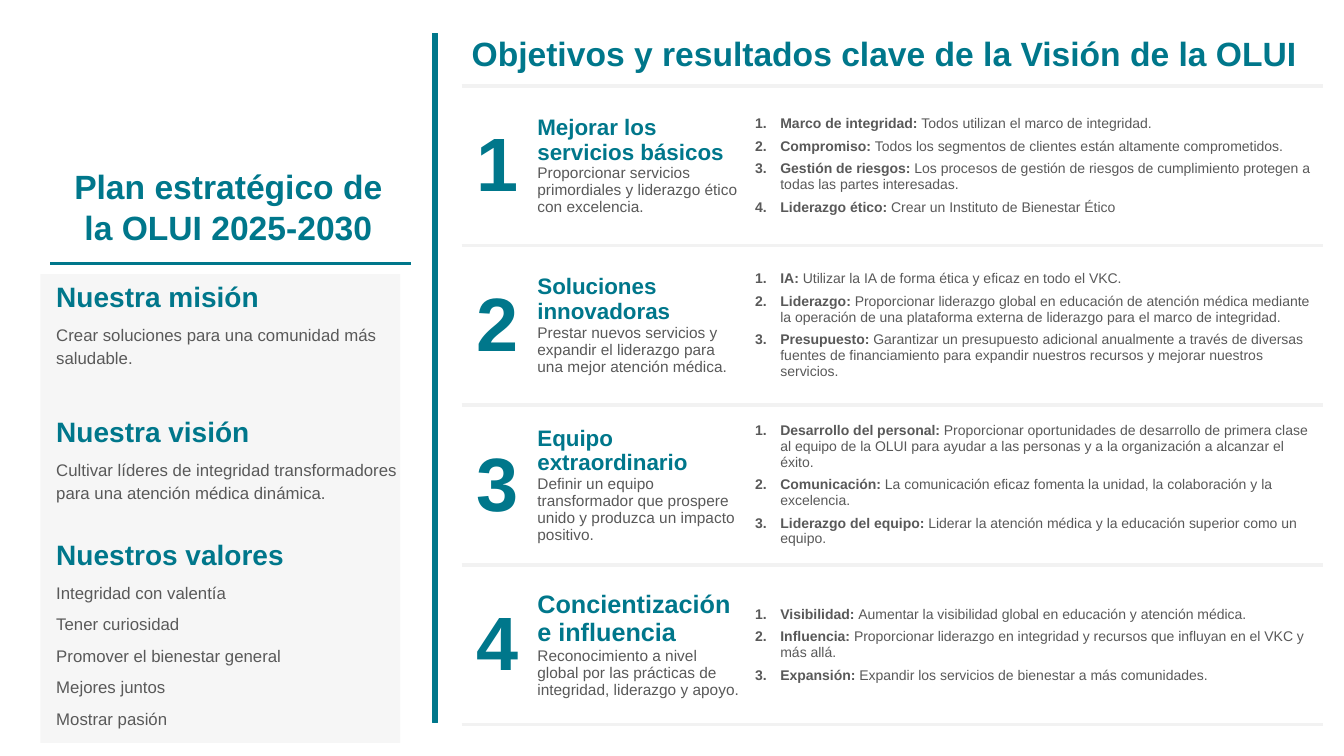
from lxml import etree
from pptx import Presentation
from pptx.dml.color import RGBColor
from pptx.enum.shapes import MSO_CONNECTOR, MSO_SHAPE
from pptx.enum.text import MSO_ANCHOR, PP_ALIGN
from pptx.oxml.ns import qn
from pptx.util import Inches, Pt

RECTANGLE = MSO_SHAPE.RECTANGLE
STRAIGHT = MSO_CONNECTOR.STRAIGHT
MIDDLE = MSO_ANCHOR.MIDDLE
LEFT, CENTER = PP_ALIGN.LEFT, PP_ALIGN.CENTER

FONT = "Arial"
COLORS = {"teal": "00778B", "gray": "595959", "pale": "F2F2F2"}

PLAN_TITLE = "Plan estratégico de la OLUI 2025-2030"
GOALS_TITLE = "Objetivos y resultados clave de la Visión de la OLUI"

# Heading, body lines, space after each body line in points
STATEMENTS = [
    ("Nuestra misión", ["Crear soluciones para una comunidad más saludable."], 30),
    ("Nuestra visión", ["Cultivar líderes de integridad transformadores para una "
                        "atención médica dinámica."], 22),
    ("Nuestros valores", ["Integridad con valentía", "Tener curiosidad",
                          "Promover el bienestar general", "Mejores juntos",
                          "Mostrar pasión"], 6),
]

# Goal, heading size, description, key results
GOALS = [
    ("Mejorar los servicios básicos", 16,
     "Proporcionar servicios primordiales y liderazgo ético con excelencia.",
     [("Marco de integridad:", "Todos utilizan el marco de integridad."),
      ("Compromiso:", "Todos los segmentos de clientes están altamente comprometidos."),
      ("Gestión de riesgos:", "Los procesos de gestión de riesgos de cumplimiento "
       "protegen a todas las partes interesadas."),
      ("Liderazgo ético:", "Crear un Instituto de Bienestar Ético")]),
    ("Soluciones innovadoras", 16,
     "Prestar nuevos servicios y expandir el liderazgo para una mejor atención médica.",
     [("IA:", "Utilizar la IA de forma ética y eficaz en todo el VKC."),
      ("Liderazgo:", "Proporcionar liderazgo global en educación de atención médica "
       "mediante la operación de una plataforma externa de liderazgo para el marco "
       "de integridad."),
      ("Presupuesto:", "Garantizar un presupuesto adicional anualmente a través de "
       "diversas fuentes de financiamiento para expandir nuestros recursos y mejorar "
       "nuestros servicios.")]),
    ("Equipo extraordinario", 16,
     "Definir un equipo transformador que prospere unido y produzca un impacto positivo.",
     [("Desarrollo del personal:", "Proporcionar oportunidades de desarrollo de primera "
       "clase al equipo de la OLUI para ayudar a las personas y a la organización a "
       "alcanzar el éxito."),
      ("Comunicación:", "La comunicación eficaz fomenta la unidad, la colaboración y la "
       "excelencia."),
      ("Liderazgo del equipo:", "Liderar la atención médica y la educación superior "
       "como un equipo.")]),
    ("Concientización e influencia", 18,
     "Reconocimiento a nivel global por las prácticas de integridad, liderazgo y apoyo.",
     [("Visibilidad:", "Aumentar la visibilidad global en educación y atención médica."),
      ("Influencia:", "Proporcionar liderazgo en integridad y recursos que influyan en "
       "el VKC y más allá."),
      ("Expansión:", "Expandir los servicios de bienestar a más comunidades.")]),
]

# Inches
SLIDE_WIDTH, SLIDE_HEIGHT = 13.33, 7.5
GOALS_LEFT, GOALS_TOP, GOALS_HEIGHT = 4.58, 0.85, 6.34
COLUMN_WIDTHS = [0.7, 2.11, 5.73]
GOALS_WIDTH = sum(COLUMN_WIDTHS)
RULE_LEFT, RULE_RIGHT, RULE_Y = 0.5, 4.08, 2.61
NUMBER_INDENT = 0.25


def color(name):
    return RGBColor.from_string(COLORS[name])


def inches(*lengths):
    return [Inches(length) for length in lengths]


def add_span(para, text, size, color_name, bold=False):
    span = para.add_run()
    span.text = text
    span.font.name = FONT
    span.font.size = Pt(size)
    span.font.bold = bold
    span.font.color.rgb = color(color_name)


def next_para(frame):
    """Return the frame's first paragraph while it is unused, else a new one."""
    first = frame.paragraphs[0]
    return frame.add_paragraph() if first.runs else first


def add_para(frame, spans, align=LEFT, before=0, after=0, spacing=None):
    para = next_para(frame)
    para.alignment = align
    para.space_before, para.space_after = Pt(before), Pt(after)
    if spacing:
        para.line_spacing = spacing
    for span in spans:
        add_span(para, *span)
    return para


def number_para(para):
    properties = para._p.get_or_add_pPr()
    properties.set("marL", str(Inches(NUMBER_INDENT)))
    properties.set("indent", str(-Inches(NUMBER_INDENT)))
    etree.SubElement(properties, qn("a:buAutoNum"), type="arabicPeriod")


def add_box(page, *place):
    frame = page.shapes.add_textbox(*inches(*place)).text_frame
    frame.word_wrap = True
    return frame


def add_block(page, place, color_name):
    block = page.shapes.add_shape(RECTANGLE, *inches(*place))
    block.shadow.inherit = False
    block.fill.solid()
    block.fill.fore_color.rgb = color(color_name)
    block.line.fill.background()
    return block


def border_rows(cell):
    """Draw pale lines above and below the cell and none at its sides."""
    properties = cell._tc.get_or_add_tcPr()
    for position, edge in enumerate(("a:lnL", "a:lnR", "a:lnT", "a:lnB")):
        line = etree.Element(qn(edge))
        if edge in ("a:lnT", "a:lnB"):
            line.set("w", str(Pt(3)))
            fill = etree.SubElement(line, qn("a:solidFill"))
            etree.SubElement(fill, qn("a:srgbClr"), val=COLORS["pale"])
        else:
            etree.SubElement(line, qn("a:noFill"))
        properties.insert(position, line)


def add_statements(page):
    panel = add_block(page, (0.4, 2.72, 3.57, 4.65), "pale")
    tint = panel.fill._xPr.find(".//" + qn("a:srgbClr"))
    etree.SubElement(tint, qn("a:alpha"), val="68000")

    frame = add_box(page, 0.46, 2.68, 3.7, 4.62)
    for heading, lines, gap in STATEMENTS:
        add_para(frame, [(heading, 20, "teal", True)], after=6, spacing=1.14)
        for line in lines:
            add_para(frame, [(line, 12, "gray")], after=gap, spacing=1.14)

    title = add_box(page, 0.48, 1.6, 3.57, 0.91)
    add_para(title, [(PLAN_TITLE, 24, "teal", True)], CENTER)
    rule = page.shapes.add_connector(
        STRAIGHT, *inches(RULE_LEFT, RULE_Y, RULE_RIGHT, RULE_Y))
    rule.line.color.rgb = color("teal")
    rule.line.width = Pt(2.25)
    etree.SubElement(rule._element.spPr, qn("a:effectLst"))


def add_goals(page):
    table = page.shapes.add_table(
        len(GOALS), len(COLUMN_WIDTHS),
        *inches(GOALS_LEFT, GOALS_TOP, GOALS_WIDTH, GOALS_HEIGHT)).table
    table.first_row = table.horz_banding = False
    for column, width in zip(table.columns, COLUMN_WIDTHS):
        column.width = Inches(width)

    for index, (goal, size, description, results) in enumerate(GOALS):
        table.rows[index].height = Inches(GOALS_HEIGHT / len(GOALS))
        cells = table.rows[index].cells
        for cell in cells:
            cell.vertical_anchor = MIDDLE
            cell.fill.background()
            border_rows(cell)
        number_cell, goal_cell, results_cell = cells
        add_para(number_cell.text_frame,
                 [(str(index + 1), 54, "teal", True)], CENTER)

        goal_cell.margin_left = goal_cell.margin_right = Inches(0.05)
        para = add_para(goal_cell.text_frame, [(goal, size, "teal", True)],
                        before=3, after=3)
        para.add_line_break()
        add_span(para, description, 11, "gray")

        for label, result in results:
            number_para(add_para(
                results_cell.text_frame,
                [(label + " ", 10, "gray", True), (result, 10, "gray")],
                before=3, after=2))


def main():
    deck = Presentation()
    deck.slide_width, deck.slide_height = inches(SLIDE_WIDTH, SLIDE_HEIGHT)
    page = deck.slides.add_slide(deck.slide_layouts[6])
    add_statements(page)
    add_goals(page)
    title = add_box(page, GOALS_LEFT, 0.28, GOALS_WIDTH, 0.5)
    add_para(title, [(GOALS_TITLE, 24, "teal", True)], after=12)
    divider = add_block(page, (4.29, 0.33, 0.05, 6.84), "teal")
    divider.line.color.rgb = color("teal")
    divider.line.width = Pt(1)
    deck.save("out.pptx")


if __name__ == "__main__":
    main()
